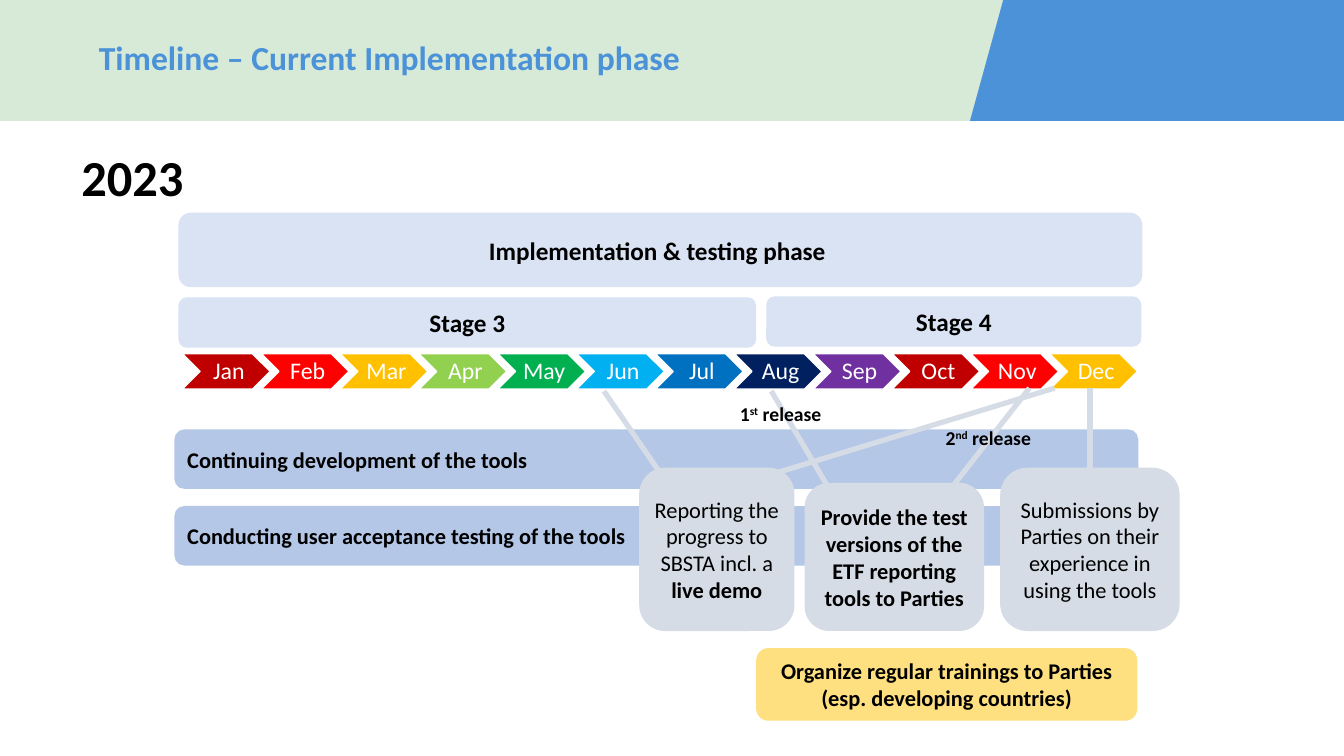
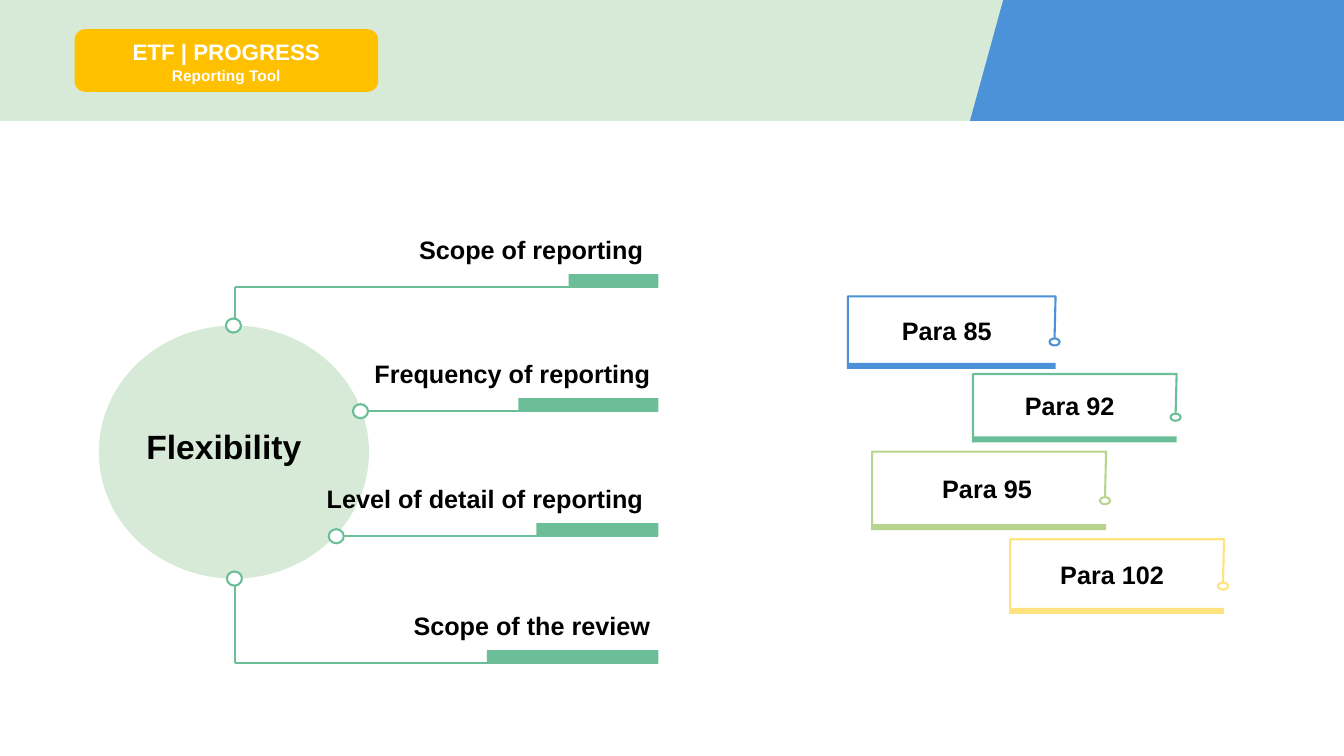
from typing import NamedTuple

from pptx import Presentation
from pptx.dml.color import RGBColor
from pptx.enum import shapes, text
from pptx.oxml.xmlchemy import OxmlElement
from pptx.util import Inches, Pt

WHITE = RGBColor(0xFF, 0xFF, 0xFF)
BLACK = RGBColor(0, 0, 0)
MINT = RGBColor(0xD7, 0xEA, 0xD7)
BLUE = RGBColor(0x4B, 0x92, 0xD8)
GREEN = RGBColor(0x6C, 0xBE, 0x99)
LIME = RGBColor(0xB8, 0xD5, 0x90)
LEMON = RGBColor(0xFF, 0xE3, 0x7E)
CREAM = RGBColor(0xFF, 0xE0, 0x80)
GOLD = RGBColor(0xFF, 0xC0, 0)
PALE = RGBColor(0xDA, 0xE3, 0xF3)
SKY = RGBColor(0xB4, 0xC7, 0xE7)
GREY = RGBColor(0xD6, 0xDC, 0xE5)
DARK = RGBColor(0xC0, 0, 0)
RED = RGBColor(0xFF, 0, 0)

KIND = shapes.MSO_SHAPE
LEFT, MID, RIGHT = text.PP_ALIGN.LEFT, text.PP_ALIGN.CENTER, text.PP_ALIGN.RIGHT
TOP, CORE, BASE = text.MSO_ANCHOR.TOP, text.MSO_ANCHOR.MIDDLE, text.MSO_ANCHOR.BOTTOM
FLAT = (0, 0, 0, 0)
PAD = (0.1, 0.05, 0.1, 0.05)


class Run(NamedTuple):
    text: str
    size: float | None = None
    bold: bool = True
    sup: bool = False


class Month(NamedTuple):
    name: str
    fill: RGBColor


class Box(NamedTuple):
    at: tuple
    fill: RGBColor
    runs: list
    size: float = 16
    align: int = MID
    pad: tuple = FLAT


class Branch(NamedTuple):
    """A label on a line that starts at a dot on the circle's edge."""
    label: str
    y: float
    bar: float
    gap: float
    dot: tuple
    start: float


class Tag(NamedTuple):
    label: str
    at: tuple
    mid: float
    color: RGBColor


MONTHS = [
    Month("Jan", DARK), Month("Feb", RED), Month("Mar", GOLD),
    Month("Apr", RGBColor(0x92, 0xD0, 0x50)), Month("May", RGBColor(0, 0xB0, 0x50)),
    Month("Jun", RGBColor(0, 0xB0, 0xF0)), Month("Jul", RGBColor(0, 0x70, 0xC0)),
    Month("Aug", RGBColor(0, 0x20, 0x60)), Month("Sep", RGBColor(0x70, 0x30, 0xA0)),
    Month("Oct", DARK), Month("Nov", RED), Month("Dec", GOLD),
]
BARS = [
    Box((1.77, 2.11, 9.56, 0.74), PALE, [Run("Implementation & testing phase")], 18,
        pad=(0, 0, 0.06, 0)),
    Box((1.77, 2.95, 5.73, 0.5), PALE, [Run("Stage 3")], 18),
    Box((7.6, 2.94, 3.72, 0.5), PALE, [Run("Stage 4")], 18),
    Box((1.73, 4.26, 9.56, 0.59), SKY, [Run("Continuing development of the tools")],
        align=LEFT, pad=(0.1, 0, 0, 0)),
    Box((1.73, 5.02, 9.56, 0.59), SKY,
        [Run("Conducting user acceptance testing of the tools")],
        align=LEFT, pad=(0.1, 0, 0, 0)),
    Box((7.5, 6.43, 3.78, 0.72), CREAM,
        [Run("Organize regular trainings to Parties (esp. developing countries)")]),
]
LINKS = [
    (6.58, 4.74, 5.99, 3.88), (8.23, 4.86, 7.65, 3.88), (10.81, 4.64, 10.81, 3.85),
    (7.54, 4.74, 10.46, 3.85), (9.39, 4.9, 10.21, 3.85),
]
NOTES = [
    Box((6.34, 4.64, 1.54, 1.62), GREY,
        [Run("Reporting the progress to SBSTA incl. a ", bold=False), Run("live demo")]),
    Box((7.98, 4.79, 1.78, 1.47), GREY,
        [Run("Provide the test versions of the ETF reporting tools to Parties")]),
    Box((9.92, 4.64, 1.78, 1.62), GREY,
        [Run("Submissions by Parties on their experience in using the tools", bold=False)]),
]
BRANCHES = [
    Branch("Scope of reporting", 2.85, 0.89, 0.14, (2.32, 3.23), 2.33),
    Branch("Frequency of reporting", 4.08, 1.39, 0.07, (3.58, 4.08), 3.66),
    Branch("Level of detail of reporting", 5.32, 1.21, 0.14, (3.34, 5.32), 3.42),
    Branch("Scope of the review", 6.58, 1.7, 0.07, (2.33, 5.74), 2.33),
]
TAGS = [
    Tag("Para 85", (8.41, 2.94, 2.06, 0.72), 9.39, BLUE),
    Tag("Para 92", (9.65, 3.71, 2.02, 0.68), 10.61, GREEN),
    Tag("Para 95", (8.65, 4.48, 2.32, 0.78), 9.79, LIME),
    Tag("Para 102", (10.02, 5.35, 2.12, 0.74), 11.03, LEMON),
]


def write(shape, *paras: list, size: float = 18, font: str = "Calibri",
          color: RGBColor = BLACK, align: int = LEFT, anchor: int = CORE,
          pad: tuple = FLAT, wrap: bool = True, space: float = 1) -> None:
    """Fill a shape with paragraphs, each one a list of runs."""
    frame = shape.text_frame
    frame.word_wrap = wrap
    frame.vertical_anchor = anchor
    (frame.margin_left, frame.margin_top,
     frame.margin_right, frame.margin_bottom) = map(Inches, pad)
    for i, runs in enumerate(paras):
        para = frame.add_paragraph() if i else frame.paragraphs[0]
        para.alignment = align
        para.line_spacing = space
        for item in runs:
            run = para.add_run()
            run.text = item.text
            run.font.name = font
            run.font.size = Pt(item.size or size)
            run.font.bold = item.bold
            run.font.color.rgb = color
            if item.sup:
                run.font._element.set("baseline", "30000")


def paint(shape, fill: RGBColor | None, line: RGBColor | None, width: float):
    shape.shadow.inherit = False
    if fill is None:
        shape.fill.background()
    else:
        shape.fill.solid()
        shape.fill.fore_color.rgb = fill
    if line is None:
        shape.line.fill.background()
    else:
        shape.line.color.rgb = line
        shape.line.width = Pt(width)
    return shape


def draw(slide, kind: int, at: tuple, fill: RGBColor | None = None,
         line: RGBColor | None = None, width: float = 1.5):
    return paint(slide.shapes.add_shape(kind, *map(Inches, at)), fill, line, width)


def trace(slide, points: list, fill: RGBColor | None = None,
          line: RGBColor | None = None, width: float = 1.5):
    """Draw an outline, closed when it is filled."""
    first, *rest = [(Inches(x), Inches(y)) for x, y in points]
    pen = slide.shapes.build_freeform(*first)
    pen.add_line_segments(rest, close=fill is not None)
    return paint(pen.convert_to_shape(), fill, line, width)


def link(slide, ends: tuple, color: RGBColor, width: float) -> None:
    line = slide.shapes.add_connector(shapes.MSO_CONNECTOR.STRAIGHT, *map(Inches, ends))
    line.line.color.rgb = color
    line.line.width = Pt(width)
    line._element.spPr.append(OxmlElement("a:effectLst"))


def label(slide, at: tuple, *paras: list, **style) -> None:
    write(slide.shapes.add_textbox(*map(Inches, at)), *paras, **style)


def card(slide, box: Box) -> None:
    shape = draw(slide, KIND.ROUNDED_RECTANGLE, box.at, box.fill)
    write(shape, box.runs, size=box.size, align=box.align, pad=box.pad)


def start(deck):
    """Add a slide with the shared header band."""
    slide = deck.slides.add_slide(deck.slide_layouts[6])
    draw(slide, KIND.RECTANGLE, (0, 0, 13.33, 1.2), MINT)
    trace(slide, [(9.62, 1.2), (9.95, 0), (13.33, 0), (13.33, 1.2)], BLUE)
    return slide


def plan(deck) -> None:
    slide = start(deck)
    label(slide, (0.98, 0.29, 7.85, 0.61), [Run("Timeline – Current Implementation phase")],
          size=24, color=BLUE, space=0.9)
    label(slide, (0.71, 1.4, 1.23, 0.71), [Run("2023")], size=36, anchor=TOP,
          pad=PAD, wrap=False)
    for i, month in enumerate(MONTHS):
        shape = draw(slide, KIND.CHEVRON, (1.81 + i * 0.782, 3.51, 0.87, 0.35),
                     month.fill, WHITE, 1)
        write(shape, [Run(month.name, bold=False)], size=17, color=WHITE, align=MID,
              pad=(0.07, 0.02, 0.02, 0.02), wrap=False, space=0.9)
    for bar in BARS:
        card(slide, bar)
    for ends in LINKS:
        link(slide, ends, GREY, 3.75)
    for note in NOTES:
        card(slide, note)
    for x, y, num, end in [(7.24, 3.94, "1", "st"), (9.28, 4.18, "2", "nd")]:
        label(slide, (x, y, 1.23, 0.34), [Run(num), Run(end, sup=True), Run(" release")],
              size=14, anchor=TOP, pad=PAD)


def fork(slide, item: Branch) -> None:
    end = 6.53
    x, y = item.dot
    if y != item.y:
        link(slide, (item.start, item.y, item.start, y), GREEN, 1.5)
    link(slide, (item.start, item.y, end, item.y), GREEN, 1.5)
    draw(slide, KIND.RECTANGLE, (end - item.bar, item.y - 0.13, item.bar, 0.13), GREEN)
    draw(slide, KIND.OVAL, (x - 0.08, y - 0.07, 0.15, 0.14), WHITE, GREEN)
    label(slide, (2.86, item.y - 0.5, 3.66, 0.32), [Run(item.label)], font="Arial",
          align=RIGHT, anchor=BASE, pad=(0, 0, item.gap, 0.05))


def hang(slide, tag: Tag) -> None:
    """Draw a tag: open frame, thick foot, and a dot under the short side."""
    x, y, w, h = tag.at
    end, drop = x + w, y + 0.58 * h
    trace(slide, [(x, y + h), (x, y), (end, y), (end - 0.01, drop)], line=tag.color)
    draw(slide, KIND.RECTANGLE, (x, y + h - 0.06, w, 0.06), tag.color)
    draw(slide, KIND.OVAL, (end - 0.06, drop, 0.1, 0.07), line=tag.color)
    label(slide, (tag.mid - 0.75, y, 1.5, h), [Run(tag.label)], font="Arial",
          align=MID, pad=(0, 0, 0, 0.05))


def flex(deck) -> None:
    slide = start(deck)
    badge = draw(slide, KIND.ROUNDED_RECTANGLE, (0.74, 0.29, 3.01, 0.62), GOLD)
    write(badge, [Run("ETF | PROGRESS", 16)], [Run("Reporting Tool", 11)], font="Arial",
          color=WHITE, align=MID, pad=PAD, space=1.07)
    draw(slide, KIND.OVAL, (0.98, 3.23, 2.68, 2.51), MINT)
    label(slide, (1.27, 4.24, 2.1, 0.42), [Run("Flexibility")], size=24, font="Arial",
          align=MID, pad=(0, 0, 0.2, 0.05))
    for item in BRANCHES:
        fork(slide, item)
    for tag in TAGS:
        hang(slide, tag)


def main() -> None:
    deck = Presentation()
    deck.slide_width, deck.slide_height = Inches(13.33), Inches(7.5)
    plan(deck)
    flex(deck)
    deck.save("out.pptx")


if __name__ == "__main__":
    main()
